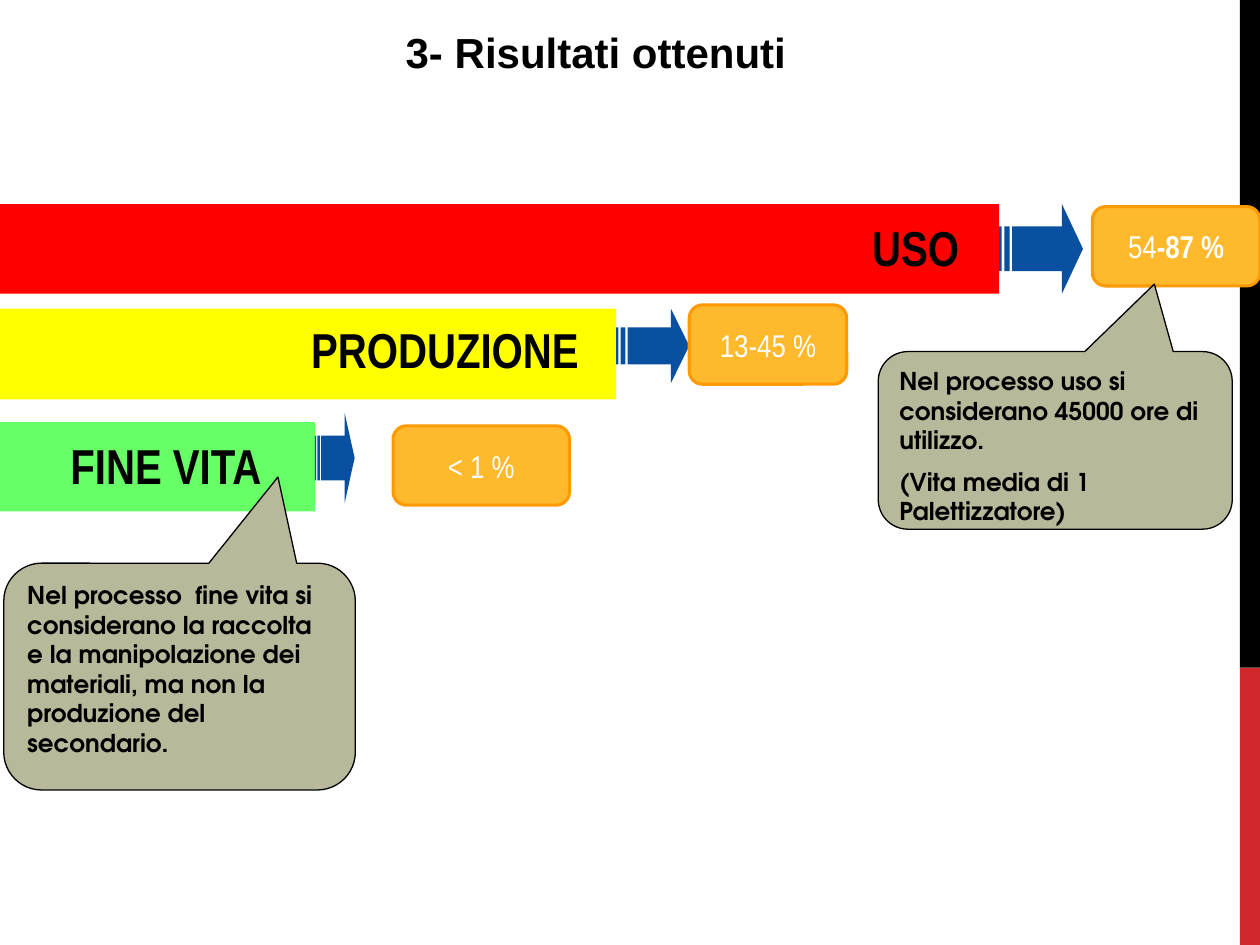
from dataclasses import dataclass

from pptx import Presentation
from pptx.dml.color import RGBColor
from pptx.enum.shapes import MSO_SHAPE
from pptx.enum.text import MSO_ANCHOR, PP_ALIGN
from pptx.util import Inches, Pt

RECTANGLE = MSO_SHAPE.RECTANGLE
ROUNDED = MSO_SHAPE.ROUNDED_RECTANGLE
STRIPED_ARROW = MSO_SHAPE.STRIPED_RIGHT_ARROW
CALLOUT = MSO_SHAPE.ROUNDED_RECTANGULAR_CALLOUT
LEFT, CENTER, RIGHT = PP_ALIGN.LEFT, PP_ALIGN.CENTER, PP_ALIGN.RIGHT
TOP, MIDDLE = MSO_ANCHOR.TOP, MSO_ANCHOR.MIDDLE

COLUMNS, ROWS = 100, 75
SLIDE_WIDTH, SLIDE_HEIGHT = Inches(10), Inches(7.5)
ROUNDING = 0.167


@dataclass(frozen=True)
class Theme:
    black: str = "000000"
    white: str = "FFFFFF"
    accent: str = "D1282E"
    use: str = "FF0000"
    production: str = "FFFF00"
    end_of_life: str = "66FF66"
    arrow: str = "0A50A1"
    badge: str = "FFB92D"
    badge_line: str = "FF9900"
    note: str = "B8B89B"
    title_font: str = "Arial"
    label_font: str = "Arial Narrow"
    note_font: str = "TeX Gyre Adventor"
    title_size: int = 24
    label_size: int = 28
    badge_size: int = 18
    note_size: int = 14


THEME = Theme()


def place(box):
    """Turn (column, row, columns, rows) into slide lengths."""
    left, top, width, height = box
    column, row = SLIDE_WIDTH / COLUMNS, SLIDE_HEIGHT / ROWS
    return (round(left * column), round(top * row),
            round(width * column), round(height * row))


def add_panel(shapes, kind, box, fill, line=None, line_width=0.75, adjustments=()):
    shape = shapes.add_shape(kind, *place(box))
    shape.shadow.inherit = False
    shape.fill.solid()
    shape.fill.fore_color.rgb = RGBColor.from_string(fill)
    if line:
        shape.line.color.rgb = RGBColor.from_string(line)
        shape.line.width = Pt(line_width)
    else:
        shape.line.fill.background()
    for index, value in enumerate(adjustments):
        shape.adjustments[index] = value
    return shape


def write(shape, paragraphs, *, font, size, color=THEME.black, align=LEFT,
          anchor=TOP, wrap=True, space_before=0):
    """Fill a shape with paragraphs, each a list of (text, bold) runs."""
    frame = shape.text_frame
    frame.word_wrap = wrap
    frame.vertical_anchor = anchor
    for index, runs in enumerate(paragraphs):
        paragraph = frame.add_paragraph() if index else frame.paragraphs[0]
        paragraph.alignment = align
        paragraph.space_before = Pt(space_before)
        for text, bold in runs:
            run = paragraph.add_run()
            run.text = text
            run.font.name = font
            run.font.size = Pt(size)
            run.font.bold = bold
            run.font.color.rgb = RGBColor.from_string(color)


def add_side_band(shapes, box):
    left, top, width, height = box
    split = 53
    add_panel(shapes, RECTANGLE, (left, top + split, width, height - split), THEME.accent)
    add_panel(shapes, RECTANGLE, (left, top, width, split), THEME.black)


def add_title(shapes, box, text):
    write(shapes.add_textbox(*place(box)), [[(text, True)]], font=THEME.title_font,
          size=THEME.title_size, align=CENTER)


def add_phase(shapes, bar_box, color, arrow_box, label_box, label):
    """Group a bar, the striped arrow at its end and the label on it."""
    group = shapes.add_group_shape().shapes
    add_panel(group, RECTANGLE, bar_box, color)
    add_panel(group, STRIPED_ARROW, arrow_box, THEME.arrow, adjustments=(0.5, 0.25))
    write(group.add_textbox(*place(label_box)), [[(label, True)]],
          font=THEME.label_font, size=THEME.label_size, align=RIGHT,
          space_before=THEME.label_size / 2)


def add_badge(shapes, box, runs):
    badge = add_panel(shapes, ROUNDED, box, THEME.badge, THEME.badge_line, 1.75,
                      (ROUNDING,))
    write(badge, [runs], font=THEME.label_font, size=THEME.badge_size,
          color=THEME.white, align=CENTER, anchor=MIDDLE, wrap=False)


def add_note(shapes, box, texts):
    note = add_panel(shapes, CALLOUT, box, THEME.note, THEME.black,
                     adjustments=(0.28, -0.88, ROUNDING))
    write(note, [[(text, True)] for text in texts], font=THEME.note_font,
          size=THEME.note_size, space_before=THEME.note_size / 2)


def main():
    presentation = Presentation()
    presentation.slide_width, presentation.slide_height = SLIDE_WIDTH, SLIDE_HEIGHT
    slide = presentation.slides.add_slide(presentation.slide_layouts[6])
    shapes = slide.shapes

    add_side_band(shapes, (98.4, 0, 1.6, ROWS))
    add_title(shapes, (-0.5, 1.6, 96.5, 4.7), "3- Risultati ottenuti ")

    phases = [
        ((0, 16.2, 79.3, 7.1), THEME.use, (79.3, 16.2, 6.65, 7.1),
         (48.2, 16.8, 28.9, 5.7), "USO"),
        ((0, 24.5, 48.9, 7.2), THEME.production, (48.9, 24.5, 5.8, 5.9),
         (17.7, 24.9, 29.2, 5.7), "PRODUZIONE"),
        ((0, 33.5, 25, 7.1), THEME.end_of_life, (25, 32.8, 3.15, 7.1),
         (-2, 34.1, 24.5, 5.7), "FINE VITA "),
    ]
    for phase in phases:
        add_phase(shapes, *phase)

    badges = [
        ((86.7, 16.4, 13.3, 6.3), [("54", False), ("-87 %", True)]),
        ((54.7, 24.2, 12.5, 6.3), [("13-45 %", False)]),
        ((31.2, 33.8, 14, 6.3), [("< 1 %", False)]),
    ]
    for box, runs in badges:
        add_badge(shapes, box, runs)

    add_note(shapes, (69.7, 27.9, 28.1, 14.1),
             ["Nel processo uso si considerano 45000 ore di utilizzo.",
              "(Vita media di 1 Palettizzatore)"])
    add_note(shapes, (0.3, 44.7, 27.9, 18),
             ["Nel processo  fine vita si considerano la raccolta e la manipolazione "
              "dei materiali, ma non la produzione del secondario."])

    presentation.save("out.pptx")


if __name__ == "__main__":
    main()
